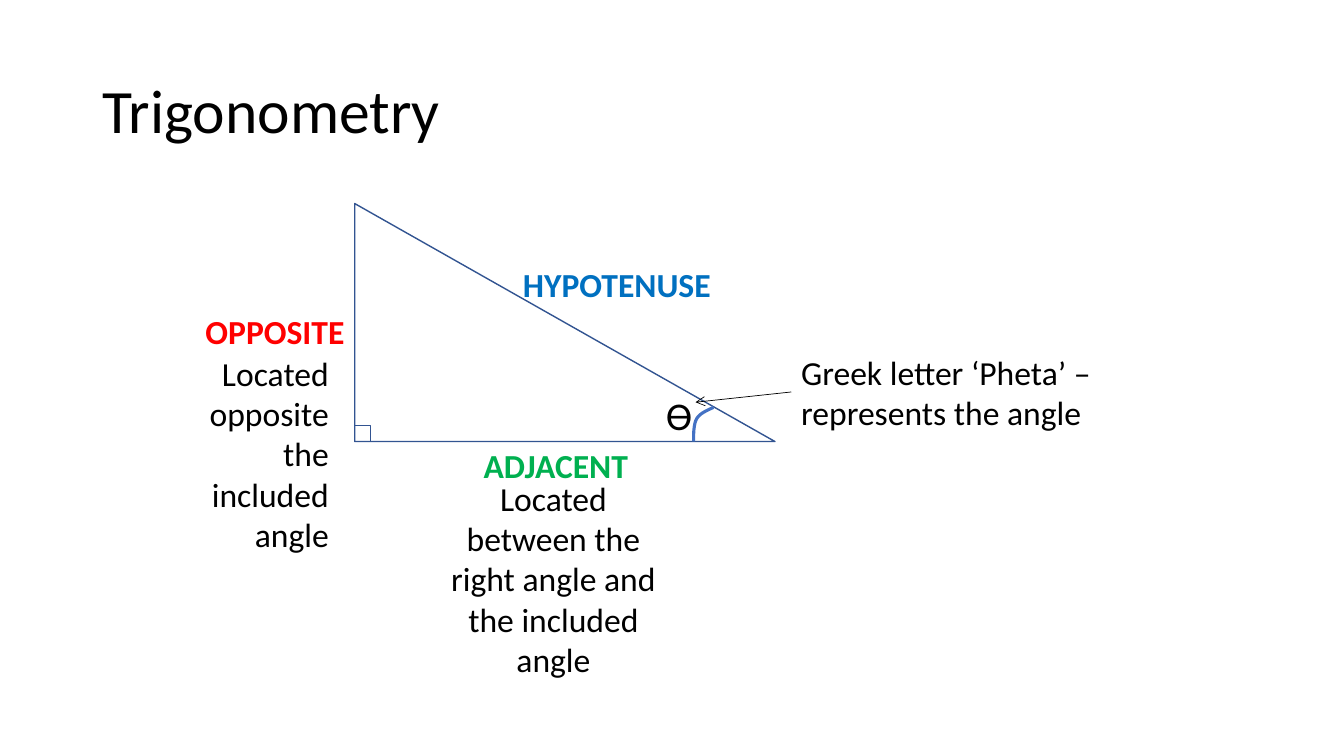
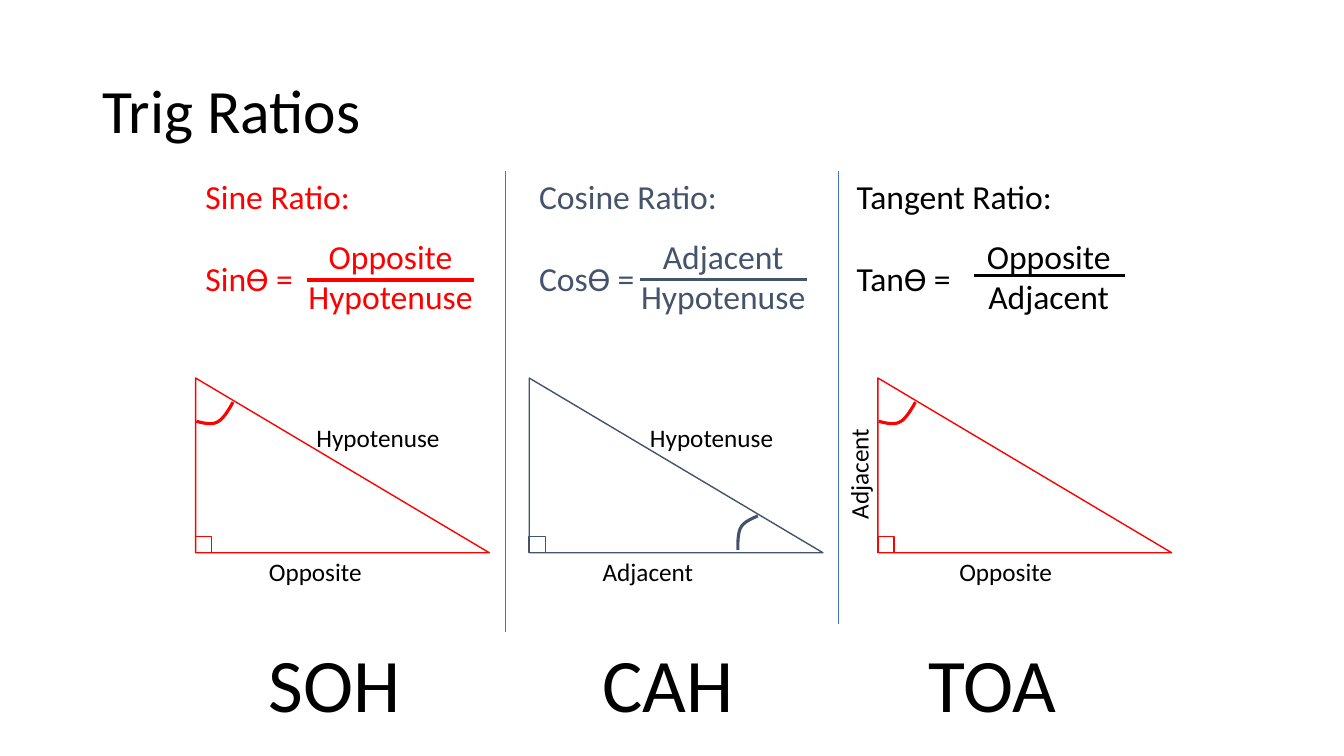
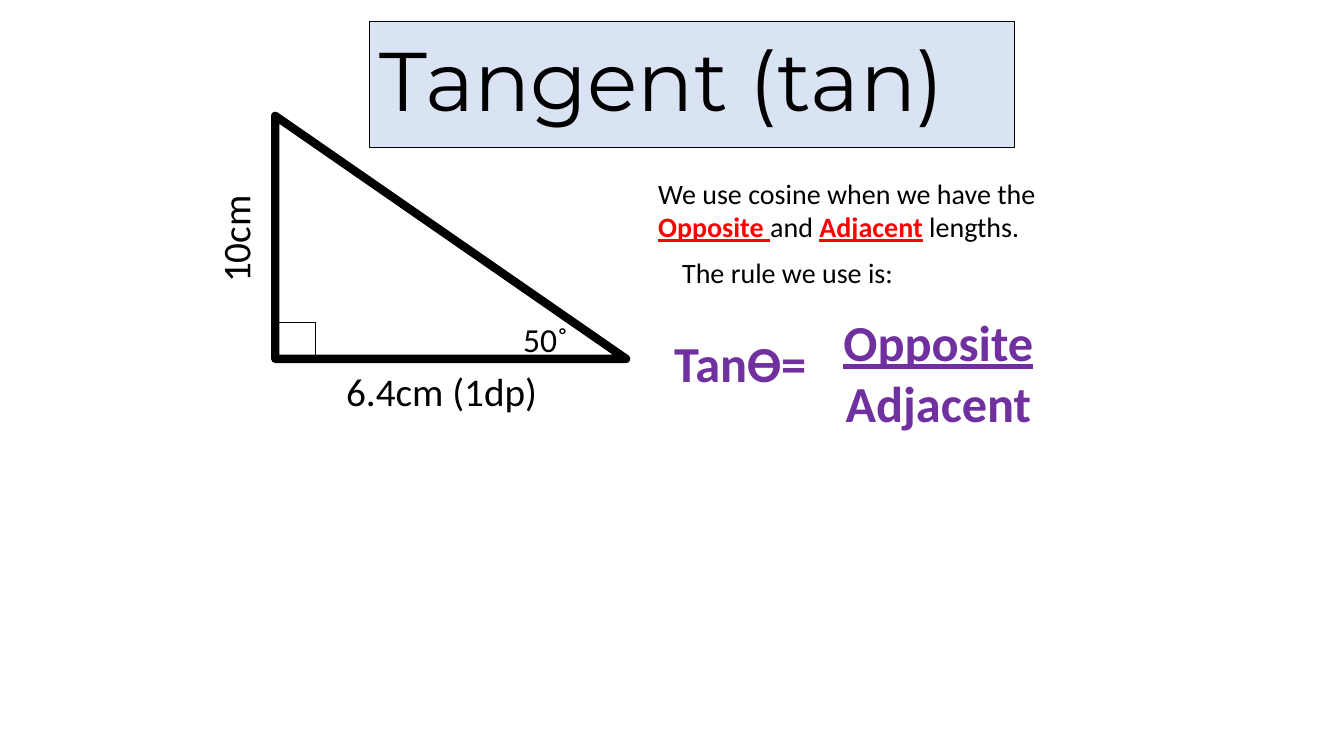
from lxml import etree
from pptx import Presentation
from pptx.dml.color import RGBColor
from pptx.enum import shapes, text
from pptx.oxml import ns
from pptx.util import Pt

BLACK = RGBColor(0x00, 0x00, 0x00)
RED = RGBColor(0xFF, 0x00, 0x00)
GREEN = RGBColor(0x00, 0xB0, 0x50)
BLUE = RGBColor(0x00, 0x70, 0xC0)
ACCENT = RGBColor(0x44, 0x72, 0xC4)
DARK_BLUE = RGBColor(0x32, 0x54, 0x91)
SLATE = RGBColor(0x44, 0x54, 0x6A)
PALE_BLUE = RGBColor(0xDA, 0xE3, 0xF3)
PURPLE = RGBColor(0x70, 0x30, 0xA0)

FONT = "Calibri"
TITLE_BOX = (66, 28.8, 828, 104.4)
LEFT, CENTER, RIGHT = (text.PP_ALIGN.LEFT, text.PP_ALIGN.CENTER,
                       text.PP_ALIGN.RIGHT)

# Angle marks: a start point, then two cubic curves of three points each.
BASE_ARC = [(14.8, 0), (10, 2.2), (5, 4.3), (2.8, 8),
            (0, 12.4), (0.6, 24.2), (0.6, 24.2)]
TOP_ARC = [(0, 13.7), (5.8, 15.1), (11.5, 16.6), (15.8, 13.7),
           (20.2, 11.5), (26.2, 0), (26.2, 0)]

SIDE_LABELS = [
    ((366.5, 185, 153.4, 36), "HYPOTENUSE", dict(color=BLUE, bold=True)),
    ((468.7, 275.8, 39.6, 41), "Ѳ", dict(size=28)),
    ((338.4, 314.6, 124.6, 36), "ADJACENT", dict(color=GREEN, bold=True)),
    ((139.7, 218.9, 124.6, 36), "OPPOSITE", dict(color=RED, bold=True)),
    ((313.2, 337.7, 164.2, 152.6),
     "Located between the right angle and the included angle",
     dict(align=CENTER)),
    ((123.1, 248.4, 118.8, 152.6), "Located opposite the included angle",
     dict(align=RIGHT)),
    ((565.2, 247.7, 244, 65.5),
     "Greek letter ‘Pheta’ – represents the angle", {}),
]

# bar is left, right and height of the fraction line; labels sit on the sides.
RATIOS = [
    dict(name="Sine Ratio:", left="SinѲ =", fraction=["Opposite", "Hypotenuse"],
         color=RED, x=139.7, fraction_x=208.1, bar=(219, 338.4, 200),
         triangle_x=139.7, line=RED, arc=TOP_ARC, slope="Hypotenuse",
         base="Opposite", base_x=185, word="SOH", word_x=185),
    dict(name="Cosine Ratio:", left="CosѲ =", fraction=["Adjacent", "Hypotenuse"],
         color=SLATE, x=378, fraction_x=445.7, bar=(457.2, 576.7, 199.5),
         triangle_x=378, line=SLATE, arc=BASE_ARC, slope="Hypotenuse",
         base="Adjacent", base_x=423.4, word="CAH", word_x=423.4),
    dict(name="Tangent Ratio:", left="TanѲ =", fraction=["Opposite", "Adjacent"],
         color=BLACK, x=604.8, fraction_x=678.2, bar=(695.5, 803.5, 196.5),
         triangle_x=627.1, line=RED, arc=TOP_ARC, upright="Adjacent",
         base="Opposite", base_x=678.2, word="TOA", word_x=656),
]
DIVIDERS = [(360.7, 451.4), (599, 445.7)]

KEY_WORD = dict(color=RED, bold=True, underline=True)
RULE_WORD = dict(size=36, color=PURPLE, bold=True)
TANGENT_TEXTS = [
    ((366.5, 224.6, 46.8, 36), ["50˚"], dict(wrap=False)),
    ((218.9, 258.5, 193, 41), ["6.4cm (1dp)"], dict(size=28, align=CENTER)),
    ((128.9, 149.8, 77.8, 41), ["10cm"], dict(size=28, wrap=False, rotation=270)),
    ((463, 122.4, 345.6, 55.4),
     [["We use cosine when we have the ", ("Opposite ", KEY_WORD), "and ",
       ("Adjacent", KEY_WORD), " lengths."]], dict(size=20)),
    ((480.2, 179.3, 329, 31.7), ["The rule we use is:"], dict(size=20)),
    ((474.5, 234, 113, 51), ["Tanϴ="], RULE_WORD),
    ((571, 218.9, 198.7, 94.3),
     [[("Opposite", dict(underline=True))], "Adjacent"],
     dict(RULE_WORD, align=CENTER)),
]


def points(values):
    return [Pt(v) for v in values]


def format_font(font, size=24, color=BLACK, bold=False, underline=False,
                name=FONT):
    font.size, font.name = Pt(size), name
    font.bold, font.underline = bold, underline
    font.color.rgb = color


def add_text(s, box, paragraphs, align=LEFT, wrap=True, rotation=0, gap=0,
             **font):
    """Each paragraph is a string or a list of strings and (string, format)."""
    sp = s.shapes.add_textbox(*points(box))
    sp.rotation = rotation
    tf = sp.text_frame
    tf.word_wrap = wrap
    tf.auto_size = text.MSO_AUTO_SIZE.SHAPE_TO_FIT_TEXT
    for i, runs in enumerate(paragraphs):
        p = tf.add_paragraph() if i else tf.paragraphs[0]
        p.alignment = align
        if i and gap:
            p.space_before = Pt(gap)
        for run in [runs] if isinstance(runs, str) else runs:
            words, extra = (run, {}) if isinstance(run, str) else run
            r = p.add_run()
            r.text = words
            format_font(r.font, **{**font, **extra})


def add_slide(prs, title, box=TITLE_BOX, **font):
    s = prs.slides.add_slide(prs.slide_layouts[5])
    sp = s.shapes.title
    sp.left, sp.top, sp.width, sp.height = points(box)
    tf = sp.text_frame
    tf.text = title
    tf.word_wrap = True
    tf.auto_size = text.MSO_AUTO_SIZE.NONE
    tf.vertical_anchor = text.MSO_ANCHOR.MIDDLE
    p = tf.paragraphs[0]
    p.alignment, p.line_spacing = LEFT, 0.9
    format_font(p.runs[0].font, **{"size": 44, **font})
    return s


def outline(sp, color, width):
    sp.shadow.inherit = False
    sp.fill.background()
    sp.line.color.rgb, sp.line.width = color, Pt(width)


def add_triangle(s, box, color, width=1, mark=(11.5, 11.5)):
    """Right triangle with the square that marks its right angle."""
    x, y, w, h = box
    kinds = shapes.MSO_SHAPE
    outline(s.shapes.add_shape(kinds.RIGHT_TRIANGLE, *points(box)), color, width)
    corner = points((x, y + h - mark[1], *mark))
    outline(s.shapes.add_shape(kinds.RECTANGLE, *corner), color, 1)


def add_arc(s, x, y, curve, color, steps=10):
    def bezier(a, b, c, d, t):
        u = 1 - t
        return u**3 * a + 3 * u * u * t * b + 3 * u * t * t * c + t**3 * d

    trace = [curve[0]]
    for i in range(0, len(curve) - 1, 3):
        xs, ys = zip(*curve[i:i + 4])
        trace += [(bezier(*xs, n / steps), bezier(*ys, n / steps))
                  for n in range(1, steps + 1)]
    trace = [(Pt(x + dx), Pt(y + dy)) for dx, dy in trace]
    builder = s.shapes.build_freeform(*trace[0])
    builder.add_line_segments(trace[1:], close=False)
    outline(builder.convert_to_shape(), color, 2.25)


def add_line(s, ends, color, width, arrow=False):
    line = s.shapes.add_connector(shapes.MSO_CONNECTOR.STRAIGHT, *points(ends))
    line.line.color.rgb, line.line.width = color, Pt(width)
    if arrow:
        etree.SubElement(line.line._get_or_add_ln(), ns.qn("a:tailEnd"),
                         type="arrow")
    etree.SubElement(line._element.spPr, ns.qn("a:effectLst"))


def build_sides(prs):
    s = add_slide(prs, "Trigonometry")
    add_triangle(s, (253.4, 145.4, 300.2, 170), DARK_BLUE)
    add_arc(s, 494.9, 291, BASE_ARC, ACCENT)
    for box, label, style in SIDE_LABELS:
        add_text(s, box, [label], **style)
    add_line(s, (565.2, 280, 496.8, 287.3), BLACK, 0.5, arrow=True)


def build_ratios(prs):
    s = add_slide(prs, "Trig Ratios")
    for x, bottom in DIVIDERS:
        add_line(s, (x, 122.4, x, bottom), ACCENT, 0.5)
    for ratio in RATIOS:
        color, x = ratio["color"], ratio["triangle_x"]
        add_text(s, (ratio["x"], 122.4, 255, 94.3),
                 [ratio["name"], ratio["left"]], gap=29.3, color=color)
        add_text(s, (ratio["fraction_x"], 164.9, 141.8, 65.5),
                 ratio["fraction"], align=CENTER, color=color)
        start, end, y = ratio["bar"]
        add_line(s, (start, y, end, y), color, 2.25)

        add_triangle(s, (x, 270, 209.8, 124.8), ratio["line"])
        dx, y = (0.6, 287.3) if ratio["arc"] is TOP_ARC else (148.5, 368.5)
        add_arc(s, x + dx, y, ratio["arc"], ratio["line"])
        if "slope" in ratio:
            add_text(s, (x + 79.2, 298, 108, 29), [ratio["slope"]], size=18)
        if "upright" in ratio:
            add_text(s, (x - 67.7, 309.6, 108, 29), [ratio["upright"]], size=18,
                     rotation=270)
        add_text(s, (ratio["base_x"], 393.8, 108, 29), [ratio["base"]], size=18)
        add_text(s, (ratio["word_x"], 451.4, 118.8, 72.7), [ratio["word"]],
                 size=54)


def build_tangent(prs):
    s = add_slide(prs, "Tangent (tan)", (264.2, 15.1, 460.8, 90), size=59.4,
                  name="Montserrat")
    title = s.shapes.title
    title.fill.solid()
    title.fill.fore_color.rgb = PALE_BLUE
    title.line.color.rgb, title.line.width = BLACK, Pt(0.75)
    add_triangle(s, (196.6, 82.8, 250.6, 173.5), BLACK, 6, mark=(28.8, 25.9))
    for box, paragraphs, style in TANGENT_TEXTS:
        add_text(s, box, paragraphs, **style)


def main():
    prs = Presentation()
    prs.slide_width, prs.slide_height = Pt(960), Pt(540)
    build_sides(prs)
    build_ratios(prs)
    build_tangent(prs)
    prs.save("out.pptx")


if __name__ == "__main__":
    main()
